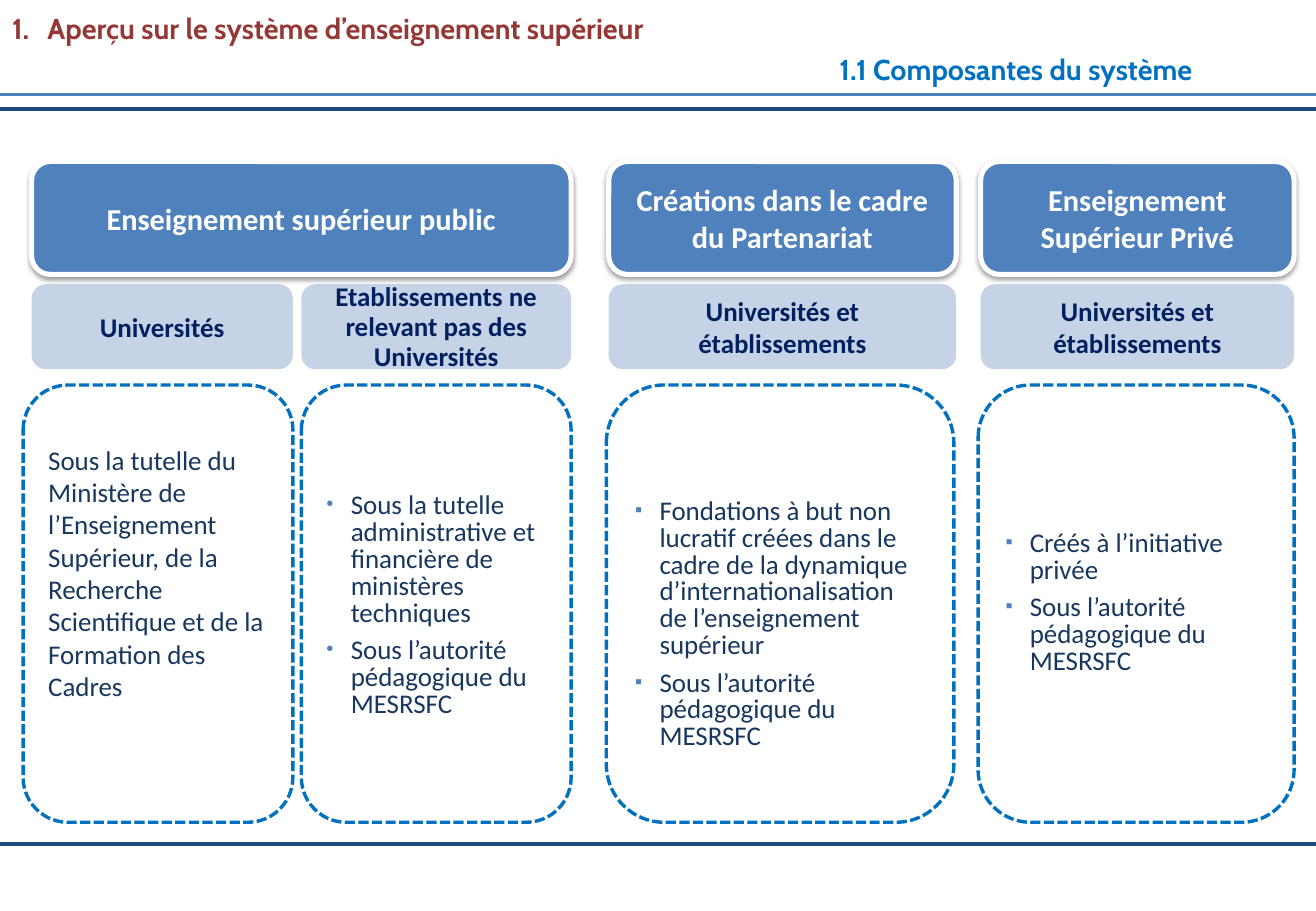
import pptx
import pptx.util
import pptx.dml.color
import pptx.enum.dml
import pptx.enum.shapes
import pptx.enum.text
import pptx.oxml
import pptx.oxml.ns

COLORS = {
    "navy": "1F497D", "rule": "4B7EBC", "red": "953735", "blue": "0070C0",
    "head": "4F81BD", "band": "7293C1", "band_text": "002060",
    "body_text": "17375E", "white": "FFFFFF", "shadow": "000000",
}
COLUMNS, ROWS = 1083, 750
ANCHOR = pptx.enum.text.MSO_ANCHOR
ALIGN = pptx.enum.text.PP_ALIGN
Pt = pptx.util.Pt

HEAD_FONT = {"name": "Calibri", "size": Pt(18), "bold": True}
BAND_FONT = {"name": "Calibri", "size": Pt(16), "bold": True}
BODY_FONT = {"name": "Calibri", "size": Pt(16), "bold": False}
TITLE_FONT = {"name": "Cabin", "size": Pt(17), "bold": True}
CENTERED = {"alignment": ALIGN.CENTER}
TIGHT_CENTERED = {"alignment": ALIGN.CENTER, "line_spacing": Pt(18)}
LEFT = {"alignment": ALIGN.LEFT}
LISTED = {"alignment": ALIGN.LEFT, "line_spacing": Pt(16), "space_before": Pt(6)}


def rgb(name):
    return pptx.dml.color.RGBColor.from_string(COLORS[name])


def set_values(target, values):
    for name, value in values.items():
        setattr(target, name, value)


def add_xml(parent, xml):
    namespace = pptx.oxml.ns.nsdecls("a")
    parent.append(pptx.oxml.parse_xml(f"<a:wrap {namespace}>{xml}</a:wrap>")[0])


class SlideBuilder:
    def __init__(self, presentation):
        self.column = presentation.slide_width / COLUMNS
        self.row = presentation.slide_height / ROWS
        self.slide = presentation.slides.add_slide(presentation.slide_layouts[5])

    def box(self, left, top, width, height):
        return (round(left * self.column), round(top * self.row),
                round(width * self.column), round(height * self.row))

    def put_text(self, shape, texts, font, color, layout, anchor=ANCHOR.MIDDLE):
        frame = shape.text_frame
        set_values(frame, {"word_wrap": True, "vertical_anchor": anchor,
                           "auto_size": pptx.enum.text.MSO_AUTO_SIZE.NONE})
        for index, text in enumerate(texts):
            paragraph = frame.add_paragraph() if index else frame.paragraphs[0]
            set_values(paragraph, layout)
            run = paragraph.add_run()
            run.text = text
            set_values(run.font, font)
            run.font.color.rgb = rgb(color)

    def indent(self, paragraph, columns, *marks):
        """Hang a paragraph by some columns behind the given bullet marks."""
        properties = paragraph._p.get_or_add_pPr()
        width = round(columns * self.column)
        properties.set("marL", str(width))
        properties.set("indent", str(-width))
        for mark in marks:
            add_xml(properties, mark)

    def title(self, text, *place):
        title = self.slide.shapes.title
        title.left, title.top, title.width, title.height = self.box(*place)
        self.put_text(title, [text], TITLE_FONT, "red", LEFT, ANCHOR.TOP)
        self.indent(title.text_frame.paragraphs[0], 29,
                    '<a:buFont typeface="+mj-lt"/>', '<a:buAutoNum type="arabicPeriod"/>')

    def label(self, text, *place):
        label = self.slide.shapes.add_textbox(*self.box(*place))
        self.put_text(label, [text], TITLE_FONT, "blue", LEFT)

    def rule(self, row, color, width):
        left, top, right, _ = self.box(0, row, COLUMNS, 0)
        connector = self.slide.shapes.add_connector(
            pptx.enum.shapes.MSO_CONNECTOR.STRAIGHT, left, top, right, top)
        connector.line.width = Pt(width)
        connector.line.color.rgb = rgb(color)
        add_xml(connector._element.spPr, "<a:effectLst/>")

    def rounded(self, *place):
        shape = self.slide.shapes.add_shape(
            pptx.enum.shapes.MSO_SHAPE.ROUNDED_RECTANGLE, *self.box(*place))
        shape.shadow.inherit = False
        return shape

    def head(self, text, left, width):
        shape = self.rounded(left, 133, width, 93)
        shape.fill.solid()
        shape.fill.fore_color.rgb = rgb("head")
        shape.line.color.rgb = rgb("white")
        shape.line.width = Pt(3)
        effects = shape._element.spPr.find(pptx.oxml.ns.qn("a:effectLst"))
        add_xml(effects, f'<a:outerShdw blurRad="{Pt(3.1)}" dist="{Pt(1.6)}" dir="5400000" '
                f'rotWithShape="0"><a:srgbClr val="{COLORS["shadow"]}">'
                '<a:alpha val="38000"/></a:srgbClr></a:outerShdw>')
        self.put_text(shape, [text], HEAD_FONT, "white", CENTERED)

    def band(self, text, left, width, layout):
        shape = self.rounded(left, 234, width, 70)
        shape.fill.solid()
        shape.fill.fore_color.rgb = rgb("band")
        color = shape._element.spPr.find(".//" + pptx.oxml.ns.qn("a:srgbClr"))
        add_xml(color, '<a:alpha val="40000"/>')
        shape.line.fill.background()
        self.put_text(shape, [text], BAND_FONT, "band_text", layout)

    def body(self, texts, left, width, bullet, top_inset, bottom_inset):
        shape = self.rounded(left, 317, width, 360)
        shape.fill.background()
        shape.line.color.rgb = rgb("blue")
        set_values(shape.line, {"width": Pt(2),
                                "dash_style": pptx.enum.dml.MSO_LINE.SQUARE_DOT})
        self.put_text(shape, texts, BODY_FONT, "body_text", LISTED if bullet else LEFT)
        set_values(shape.text_frame, {"margin_top": round(top_inset * self.row),
                                      "margin_bottom": round(bottom_inset * self.row)})
        if bullet:
            for paragraph in shape.text_frame.paragraphs:
                self.indent(paragraph, 20,
                            f'<a:buClr><a:srgbClr val="{COLORS["head"]}"/></a:buClr>',
                            '<a:buSzPct val="75000"/>', '<a:buFont typeface="Arial"/>',
                            f'<a:buChar char="{bullet}"/>')


AUTHORITY = "Sous l’autorité pédagogique du MESRSFC"
HEADS = [
    ("Enseignement supérieur public", 26, 444),
    ("Créations dans le cadre du Partenariat", 501, 286),
    ("Enseignement Supérieur Privé", 807, 258),
]
BANDS = [
    ("Universités", 26, 215, CENTERED),
    ("Etablissements ne relevant pas des Universités", 248, 222, TIGHT_CENTERED),
    ("Universités et établissements", 501, 286, CENTERED),
    ("Universités et établissements", 807, 258, CENTERED),
]
BODIES = [
    (["Sous la tutelle du Ministère de l’Enseignement Supérieur, de la Recherche "
      "Scientifique et de la Formation des Cadres"], 19, 222, None, 5, 56),
    (["Sous la tutelle administrative et financière de ministères techniques",
      AUTHORITY], 248, 222, "•", 9, 5),
    (["Fondations à but non lucratif créées dans le cadre de la dynamique "
      "d’internationalisation de l’enseignement supérieur", AUTHORITY],
     499, 286, "▪", 40, 5),
    (["Créés à l’initiative privée", AUTHORITY], 805, 260, "▪", 5, 5),
]


def main():
    presentation = pptx.Presentation()
    presentation.slide_width = pptx.util.Inches(10.83)
    presentation.slide_height = pptx.util.Inches(7.5)
    builder = SlideBuilder(presentation)
    for rule in [(695, "navy", 2.25), (90, "navy", 2.25), (78, "rule", 2)]:
        builder.rule(*rule)
    builder.title("Aperçu sur le système d’enseignement supérieur", 0, 4, COLUMNS, 36)
    builder.label("1.1 Composantes du système", 681, 38, 380, 38)
    for head in HEADS:
        builder.head(*head)
    for band in BANDS:
        builder.band(*band)
    for body in BODIES:
        builder.body(*body)
    presentation.save("out.pptx")


if __name__ == "__main__":
    main()
